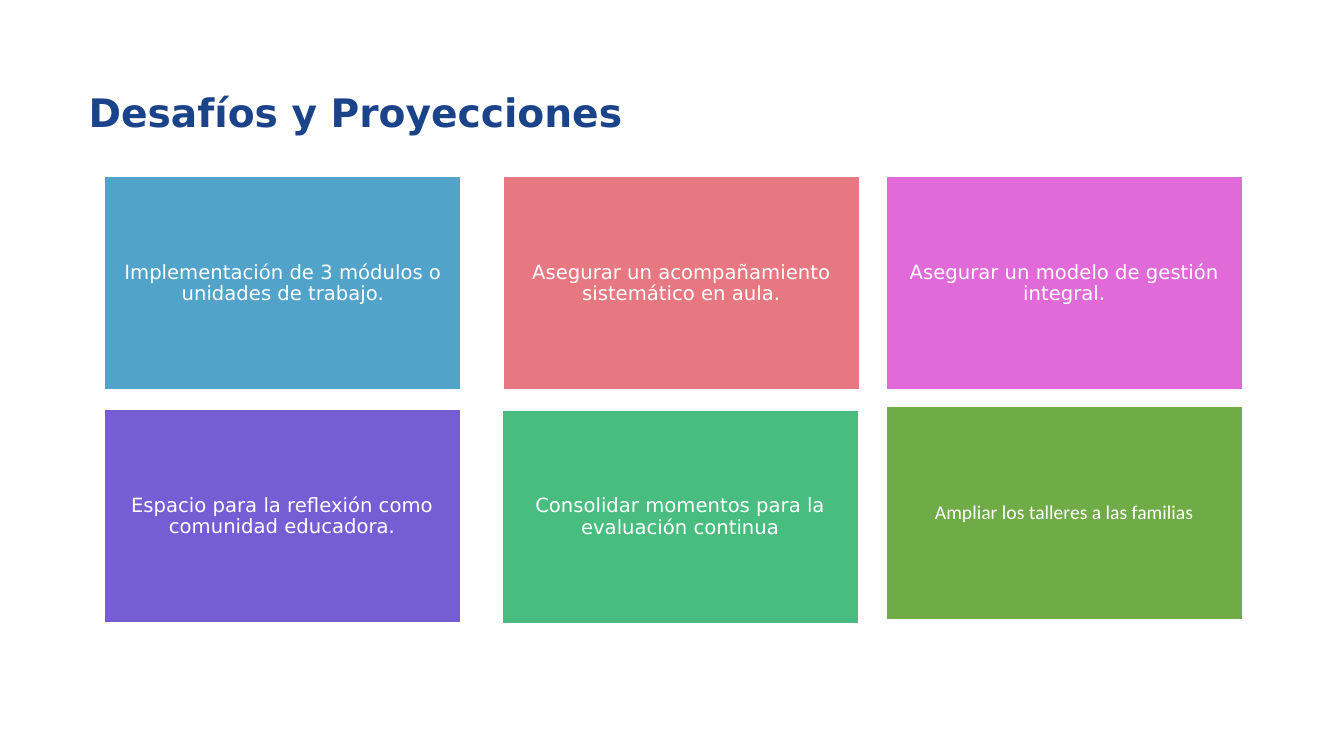
from pptx import Presentation
from pptx.dml.color import RGBColor
from pptx.enum.shapes import MSO_SHAPE
from pptx.enum.text import MSO_ANCHOR, MSO_AUTO_SIZE, PP_ALIGN
from pptx.util import Cm, Pt

COLORS = {
    "heading": "1B4389",
    "white": "FFFFFF",
    "modules": "52A3CA",
    "classroom": "E77780",
    "management": "DF6AD8",
    "reflection": "755ED4",
    "assessment": "49BD80",
    "families": "6FAB46",
}

CARD_WIDTH, CARD_HEIGHT = 8.98, 5.38

CHALLENGES = [
    ("modules", 0.02, 0, "Implementación de 3 módulos o unidades de trabajo.", "DejaVu Sans"),
    ("classroom", 10.06, 0, "Asegurar un acompañamiento sistemático en aula.", "DejaVu Sans"),
    ("management", 19.71, 0, "Asegurar un modelo de gestión integral.", "DejaVu Sans"),
    ("reflection", 0, 5.87, "Espacio para la reflexión como comunidad educadora.", "DejaVu Sans"),
    ("assessment", 10.03, 5.89, "Consolidar momentos para la evaluación continua", "DejaVu Sans"),
    ("families", 19.71, 5.79, "Ampliar los talleres a las familias", "Calibri"),
]


def color(name):
    return RGBColor.from_string(COLORS[name])


def apply(target, values):
    for attribute, value in values.items():
        setattr(target, attribute, value)


def write(shape, wording, ink, frame_format, paragraph_format, font_format):
    frame = shape.text_frame
    frame.text = wording
    apply(frame, {"word_wrap": True, "auto_size": MSO_AUTO_SIZE.NONE, **frame_format})
    paragraph = frame.paragraphs[0]
    apply(paragraph, {"line_spacing": 0.9, "space_before": Pt(0), **paragraph_format})
    apply(paragraph.font, font_format)
    paragraph.font.color.rgb = color(ink)


def add_heading(slide, left, top, width, height):
    heading = slide.shapes.title
    apply(heading, {"left": Cm(left), "top": Cm(top), "width": Cm(width), "height": Cm(height)})
    write(
        heading,
        "Desafíos y Proyecciones",
        "heading",
        {"vertical_anchor": MSO_ANCHOR.TOP},
        {"alignment": PP_ALIGN.LEFT},
        {"name": "DejaVu Sans", "size": Pt(28), "bold": True},
    )


def add_challenges(slide, left, top):
    margins = {f"margin_{side}": Cm(0.15) for side in ("left", "top", "right", "bottom")}
    for topic, across, down, wording, typeface in CHALLENGES:
        card = slide.shapes.add_shape(
            MSO_SHAPE.RECTANGLE,
            Cm(left + across), Cm(top + down), Cm(CARD_WIDTH), Cm(CARD_HEIGHT),
        )
        card.shadow.inherit = False
        card.fill.solid()
        card.fill.fore_color.rgb = color(topic)
        card.line.color.rgb = color("white")
        card.line.width = Pt(1)
        write(
            card,
            wording,
            "white",
            {"vertical_anchor": MSO_ANCHOR.MIDDLE, **margins},
            {"alignment": PP_ALIGN.CENTER},
            {"name": typeface, "size": Pt(14)},
        )


def main():
    deck = Presentation()
    apply(deck, {"slide_width": Cm(33.87), "slide_height": Cm(19.05)})
    slide = deck.slides.add_slide(deck.slide_layouts.get_by_name("Title Only"))
    add_heading(slide, 1.98, 2.24, 28.22, 3.02)
    add_challenges(slide, 2.62, 4.45)
    deck.save("out.pptx")


if __name__ == "__main__":
    main()
